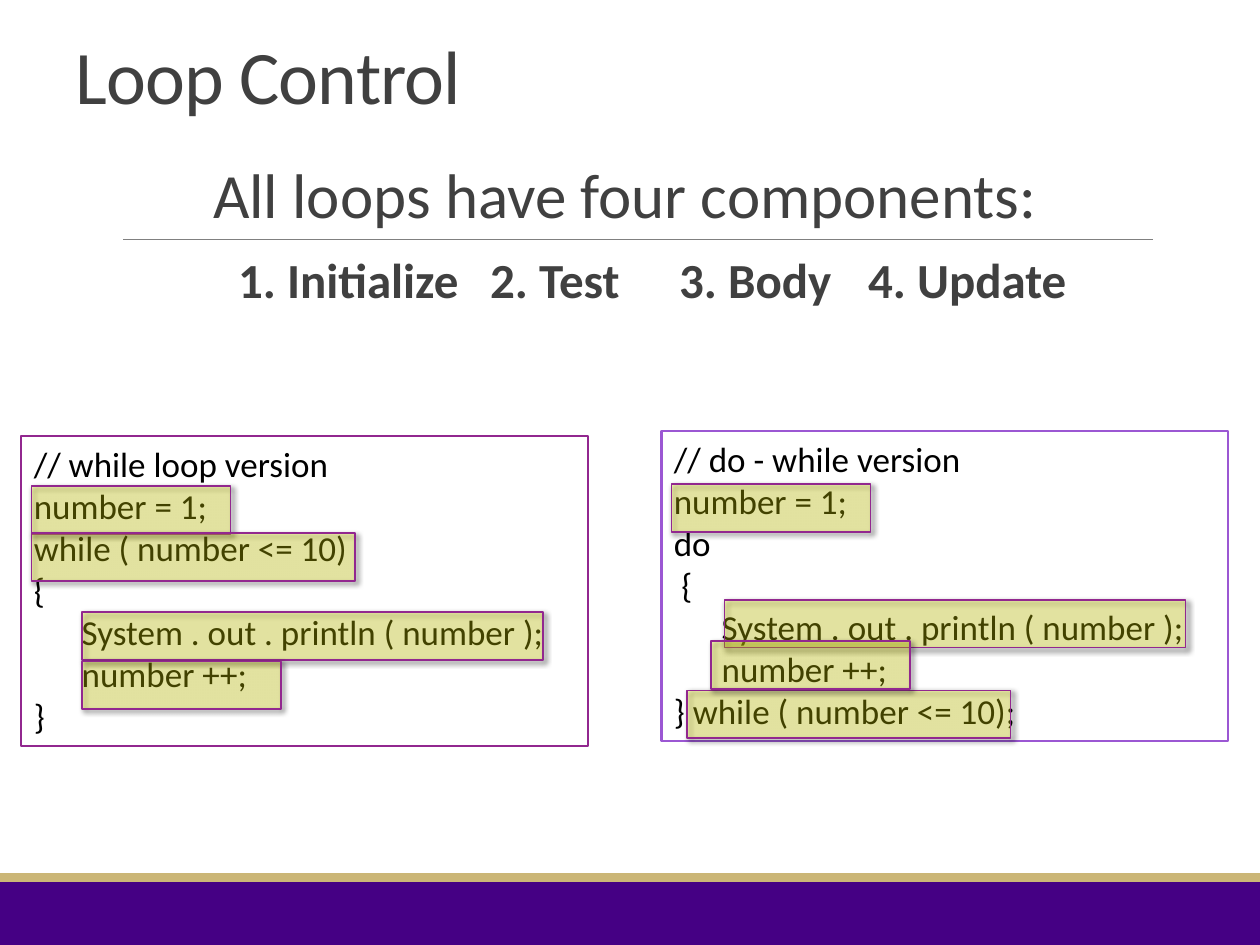
"""Build the Loop Control slide comparing while and do-while loops."""
from lxml.etree import SubElement
from pptx import Presentation
from pptx.dml.color import RGBColor
from pptx.enum.shapes import MSO_CONNECTOR, MSO_SHAPE
from pptx.enum.text import MSO_ANCHOR, MSO_AUTO_SIZE, PP_ALIGN
from pptx.oxml import parse_xml
from pptx.oxml.ns import nsdecls, qn
from pptx.util import Inches, Pt

PURPLE = RGBColor(0x45, 0x00, 0x84)
GOLD = RGBColor(0xCB, 0xB6, 0x77)
GRAY = RGBColor(0x80, 0x80, 0x80)
DARK = RGBColor(0x40, 0x40, 0x40)
PLUM = RGBColor(0x92, 0x27, 0x8F)
VIOLET = RGBColor(0x9B, 0x57, 0xD3)
YELLOW = RGBColor(0xFF, 0xFF, 0x00)
WHITE = RGBColor(0xFF, 0xFF, 0xFF)
BLACK = RGBColor(0x00, 0x00, 0x00)


def add_box(left, top, width, height, fill, edge=None, weight=1):
    box = slide.shapes.add_shape(
        MSO_SHAPE.RECTANGLE, Inches(left), Inches(top), Inches(width), Inches(height))
    box.shadow.inherit = False
    box.fill.solid()
    box.fill.fore_color.rgb = fill
    if edge is None:
        box.line.fill.background()
    else:
        box.line.color.rgb = edge
        box.line.width = Pt(weight)
    return box


def set_font(para, size, color, bold=False):
    para.font.name = "Calibri"
    para.font.size = Pt(size)
    para.font.bold = bold
    para.font.color.rgb = color


deck = Presentation()
deck.slide_width, deck.slide_height = Inches(10), Inches(7.5)
slide = deck.slides.add_slide(deck.slide_layouts[1])

add_box(0, 7, 10, 0.5, PURPLE)
add_box(0, 6.93, 10, 0.07, GOLD)
rule = slide.shapes.add_connector(
    MSO_CONNECTOR.STRAIGHT, Inches(0.98), Inches(1.9), Inches(9.15), Inches(1.9))
rule.line.color.rgb = GRAY
rule.line.width = Pt(0.5)
SubElement(rule.element.spPr, qn("a:effectLst"))

title = slide.shapes.title
title.left, title.top, title.width, title.height = map(Inches, (0.5, 0.3, 9, 0.7))
frame = title.text_frame
frame.text = "Loop Control"
frame.auto_size = MSO_AUTO_SIZE.NONE
frame.vertical_anchor = MSO_ANCHOR.BOTTOM
para = frame.paragraphs[0]
para.alignment = PP_ALIGN.LEFT
para.line_spacing = 0.85
set_font(para, 43.2, DARK)
para.runs[0].font._element.set("spc", "-50")

body = slide.placeholders[1]
body.left, body.top, body.width, body.height = map(Inches, (0.42, 1.25, 9.08, 5.92))
frame = body.text_frame
frame.text = "All loops have four components:\n1. Initialize\t2. Test\t3. Body\t4. Update"
frame.auto_size = MSO_AUTO_SIZE.NONE
frame.vertical_anchor = MSO_ANCHOR.TOP
frame.margin_left = frame.margin_right = 0
styles = [(36, False, PP_ALIGN.CENTER, 0), (28, True, PP_ALIGN.LEFT, 1.47)]
for para, (size, bold, align, left) in zip(frame.paragraphs, styles):
    para.alignment = align
    para.line_spacing = 0.9
    para.space_before, para.space_after = Pt(12), Pt(2)
    set_font(para, size, DARK, bold)
    props = para._p.get_or_add_pPr()
    props.set("marL", str(Inches(left)))
    props.set("indent", "0")
    SubElement(props, qn("a:buNone"))
tabs = SubElement(frame.paragraphs[1]._p.pPr, qn("a:tabLst"))
for stop in (3.56, 4.76, 6.06):
    SubElement(tabs, qn("a:tab"), pos=str(Inches(stop)), algn="l")

while_code = [
    ("// while loop version", 0), ("number = 1;", 0), ("while ( number <= 10)", 0),
    ("{", 0), ("System . out . println ( number );", 0.38), ("number ++;", 0.38), ("}", 0)]
do_code = [
    ("// do - while version", 0), ("number = 1;", 0), ("do", 0), ("{", 0.06),
    ("System . out . println ( number );", 0.38), ("number ++;", 0.38),
    ("} while ( number <= 10);", 0)]
for left, top, edge, code in [
        (0.17, 3.46, PLUM, while_code), (5.25, 3.42, VIOLET, do_code)]:
    frame = add_box(left, top, 4.5, 2.46, WHITE, edge, 1.25).text_frame
    frame.word_wrap = True
    frame.vertical_anchor = MSO_ANCHOR.TOP
    frame.text = "\n".join(text for text, _ in code)
    for para, (_, indent) in zip(frame.paragraphs, code):
        para.alignment = PP_ALIGN.LEFT
        set_font(para, 20, BLACK)
        para._p.get_or_add_pPr().set("marL", str(Inches(indent)))

SHORT, MEDIUM, LONG = 1.58, 2.57, 3.66
marks = [
    (0.25, 3.86, SHORT), (5.33, 3.84, SHORT),
    (0.25, 4.23, MEDIUM), (5.45, 5.48, MEDIUM),
    (0.65, 4.86, LONG), (5.75, 4.76, LONG),
    (0.65, 5.25, SHORT), (5.64, 5.09, SHORT)]
for left, top, width in marks:
    props = add_box(left, top, width, 0.38, YELLOW, PLUM).element.spPr
    tint = props.find(qn("a:solidFill")).find(qn("a:srgbClr"))
    SubElement(tint, qn("a:alpha"), val="26000")
    props.find(qn("a:effectLst")).append(parse_xml(
        f'<a:outerShdw {nsdecls("a")} blurRad="{Pt(3)}" dist="{Pt(2)}" dir="2700000"'
        ' algn="tl" rotWithShape="0"><a:srgbClr val="000000">'
        '<a:alpha val="60000"/></a:srgbClr></a:outerShdw>'))

deck.save("out.pptx")
